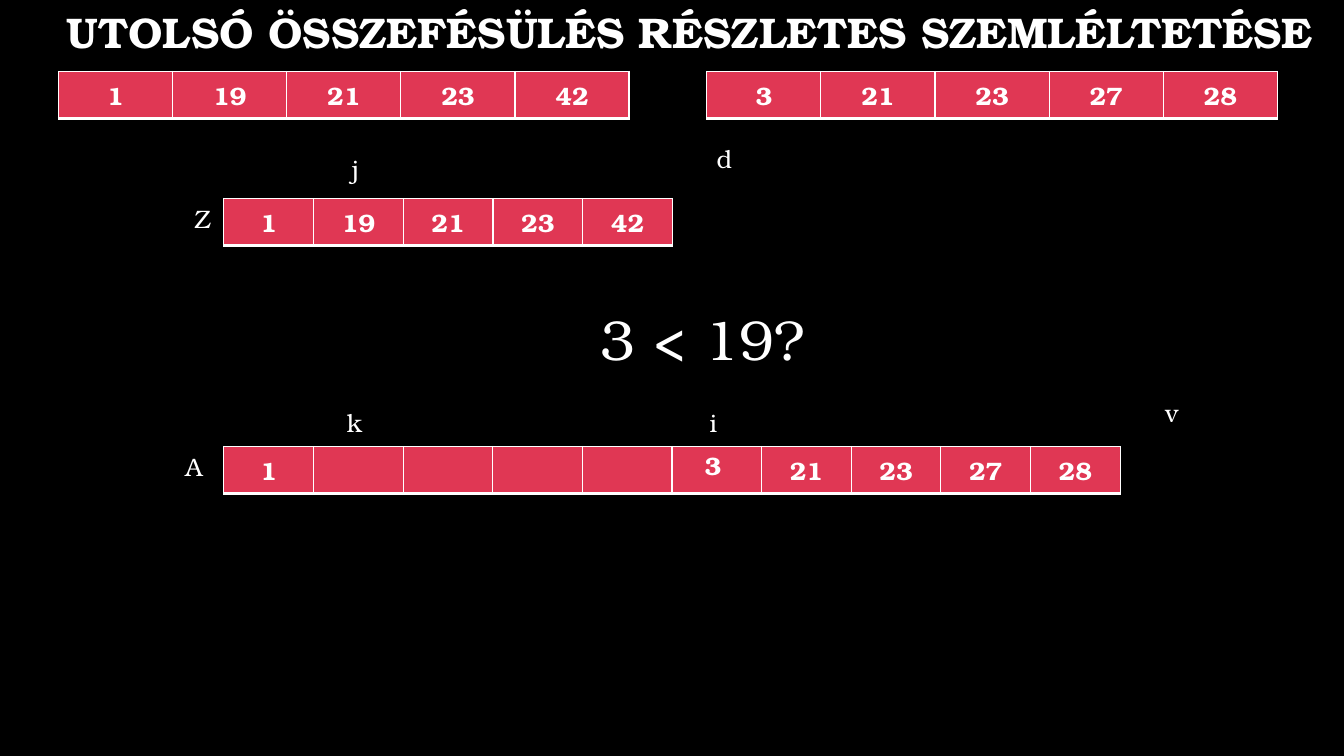
from pptx import Presentation
from pptx.dml.color import RGBColor
from pptx.enum.text import MSO_ANCHOR, MSO_AUTO_SIZE, PP_ALIGN
from pptx.oxml import parse_xml
from pptx.oxml.ns import nsdecls
from pptx.util import Inches, Pt

CENTER, LEFT = PP_ALIGN.CENTER, PP_ALIGN.LEFT
MIDDLE = MSO_ANCHOR.MIDDLE
FIT_SHAPE, NO_FIT = MSO_AUTO_SIZE.SHAPE_TO_FIT_TEXT, MSO_AUTO_SIZE.NONE
FONT = "TeX Gyre Bonum"
COLORS = {"background": "000000", "text": "FFFFFF", "cell": "E03754"}

# Content
TITLE = "UTOLSÓ ÖSSZEFÉSÜLÉS RÉSZLETES SZEMLÉLTETÉSE"
LEFT_HALF = ["1", "19", "21", "23", "42"]
RIGHT_HALF = ["3", "21", "23", "27", "28"]
MERGED = ["1", "", "", "", "", "", *RIGHT_HALF[1:]]

# Arrays: left, top, total width, values
ARRAYS = [
    (0.58, 0.71, 5.66, LEFT_HALF),
    (7.01, 0.71, 5.66, RIGHT_HALF),
    (2.22, 1.97, 4.45, LEFT_HALF),
    (2.22, 4.43, 8.89, MERGED),
]
ROW_HEIGHT = 0.41
BORDERS = {"lnL": 1, "lnR": 1, "lnT": 1, "lnB": 3}

# Labels: text, left, top, width, height, format
LABELS = [
    ("Z", 1.83, 1.97, 0.39, 0.4, {}),
    ("A", 1.74, 4.43, 0.39, 0.4, {}),
    ("i", 6.94, 3.99, 0.94, 0.4, {}),
    ("j", 3.39, 1.47, 0.94, 0.4, {}),
    ("3 < 19?", 5.86, 2.97, 4.29, 0.77, {"size": 40}),
    ("k", 3.34, 3.99, 0.94, 0.4, {}),
    ("3", 6.89, 4.42, 0.81, 0.4, {"bold": True}),
    ("d", 7.01, 1.37, 0.94, 0.4, {}),
    ("v", 11.46, 3.89, 0.94, 0.4, {}),
]


def write(frame, text, size=18, bold=False, align=LEFT, spacing=None):
    paragraph = frame.paragraphs[0]
    paragraph.alignment = align
    paragraph.line_spacing = spacing
    run = paragraph.add_run()
    run.text = text
    run.font.name = FONT
    run.font.size = Pt(size)
    run.font.bold = bold
    run.font.color.rgb = RGBColor.from_string(COLORS["text"])


def outline(cell):
    # Borders must stand before the fill in the cell properties
    properties = cell._tc.get_or_add_tcPr()
    for position, (side, width) in enumerate(BORDERS.items()):
        properties.insert(position, parse_xml(
            f'<a:{side} {nsdecls("a")} w="{Pt(width)}"><a:solidFill>'
            f'<a:srgbClr val="{COLORS["text"]}"/></a:solidFill></a:{side}>'))


def add_array(slide, left, top, width, values):
    table = slide.shapes.add_table(
        1, len(values), Inches(left), Inches(top),
        Inches(width), Inches(ROW_HEIGHT)).table
    for column, value in enumerate(values):
        table.columns[column].width = Inches(width / len(values))
        cell = table.cell(0, column)
        cell.fill.solid()
        cell.fill.fore_color.rgb = RGBColor.from_string(COLORS["cell"])
        outline(cell)
        if value:
            write(cell.text_frame, value, bold=True, align=CENTER)


def main():
    deck = Presentation()
    deck.slide_width, deck.slide_height = Inches(13.33), Inches(7.5)
    slide = deck.slides.add_slide(deck.slide_layouts[5])
    slide.background.fill.solid()
    slide.background.fill.fore_color.rgb = RGBColor.from_string(COLORS["background"])

    # Title
    title = slide.shapes.title
    title.left, title.top = Inches(0.22), Inches(0)
    title.width, title.height = Inches(13.23), Inches(0.68)
    title.text_frame.vertical_anchor = MIDDLE
    title.text_frame.auto_size = NO_FIT
    write(title.text_frame, TITLE, size=30.6, bold=True, align=CENTER, spacing=0.9)

    # Arrays
    for array in ARRAYS:
        add_array(slide, *array)

    # Array names, indices and the comparison
    for text, left, top, width, height, style in LABELS:
        label = slide.shapes.add_textbox(
            Inches(left), Inches(top), Inches(width), Inches(height))
        label.text_frame.word_wrap = True
        label.text_frame.auto_size = FIT_SHAPE
        write(label.text_frame, text, **style)

    deck.save("out.pptx")


if __name__ == "__main__":
    main()
